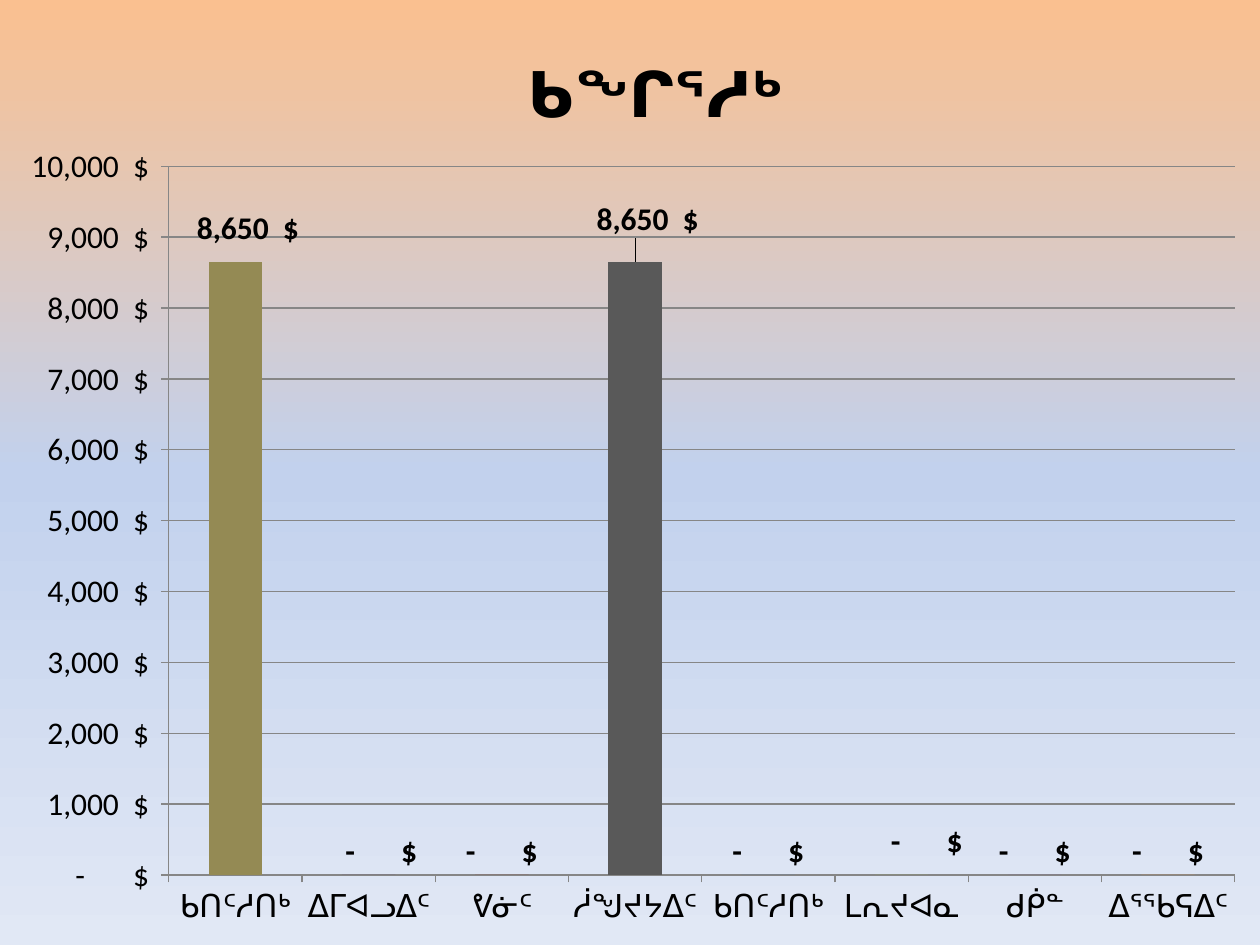
from copy import deepcopy
from lxml import etree
from pptx import Presentation
from pptx.chart.data import CategoryChartData
from pptx.dml.color import RGBColor
from pptx.enum.chart import XL_CHART_TYPE, XL_LABEL_POSITION, XL_TICK_MARK
from pptx.oxml.ns import qn
from pptx.util import Inches, Pt

COLUMN = XL_CHART_TYPE.COLUMN_CLUSTERED
OUTSIDE = XL_LABEL_POSITION.OUTSIDE_END
TICK_OUT = XL_TICK_MARK.OUTSIDE

WIDE, HIGH = Inches(10), Inches(7.5)
FONT = "Calibri"
MONEY = (r'_ * #,##0_)\ "$"_ ;_ * \(#,##0\)\ "$"_ ;'
         r'_ * "-"??_)\ "$"_ ;_ @_ ')
COLORS = {
    "text": "000000", "line": "868686", "bar": "4F81BD",
    "olive": "948A54", "plum": "604A7B", "brick": "953735",
    "grey": "595959", "green": "9BBB59", "violet": "8064A2",
    "orange": "F79646",
}
SKY = [(0, "FAC090"), (50, "C2D1ED"), (100, "E1E8F5")]

# Category, value, bar colour, label shift as shares of the chart
ROWS = [
    ("ᑲᑎᑦᓱᑎᒃ", 8650, "olive", (0.01, -0.01)),
    ("ᐃᒥᐊᓗᐃᑦ", 0, "plum", (0.01, 0)),
    ("ᕓᓃᑦ", 0, "brick", (0, 0)),
    ("ᓲᖑᔪᔭᐃᑦ", 8650, "grey", (0.01, -0.02)),
    ("ᑲᑎᑦᓱᑎᒃ", 0, "bar", None),
    ("ᒪᕆᔪᐊᓇ", 0, "green", (0.02, -0.01)),
    ("ᑯᑮᓐ", 0, "violet", None),
    ("ᐃᕐᖃᕋᐃᑦ", 0, "orange", None),
]


def rgb(name):
    return RGBColor.from_string(COLORS[name])


def style(font, size=18, bold=False, color="text"):
    font.name, font.size, font.bold = FONT, Pt(size), bold
    font.color.rgb = rgb(color)


def write(frame, text, **form):
    run = frame.paragraphs[0].add_run()
    run.text = text
    style(run.font, **form)


def node(parent, tag, **attrs):
    return etree.SubElement(parent, qn(tag), attrs)


def place(owner, index, inner=False, **shares):
    """Give a chart part a manual layout in shares of the chart."""
    for old in owner.findall(qn("c:layout")):
        owner.remove(old)
    layout = node(owner, "c:layout")
    manual = node(layout, "c:manualLayout")
    if inner:
        node(manual, "c:layoutTarget", val="inner")
    if index != 1 or owner.tag == qn("c:title"):
        for key in "xy":
            node(manual, f"c:{key}Mode", val="edge")
    for key, share in shares.items():
        node(manual, f"c:{key}", val=str(share))
    owner.insert(index, layout)


def paint_sky(slide):
    fill = slide.background.fill
    fill.gradient()
    fill.gradient_angle = 270
    stops = fill.gradient_stops
    first = slide.background._cSld.find(".//" + qn("a:gs"))
    first.addnext(deepcopy(first))
    for stop, (share, color) in zip(stops, SKY):
        stop.position = share / 100
        stop.color.rgb = RGBColor.from_string(color)


def style_axis(axis):
    axis.major_tick_mark = TICK_OUT
    axis.format.line.color.rgb = rgb("line")
    style(axis.tick_labels.font)


def style_bars(series):
    series.format.fill.solid()
    series.format.fill.fore_color.rgb = rgb("bar")
    labels = series.data_labels
    labels.show_value = True
    labels.number_format = MONEY
    labels.number_format_is_linked = False
    labels.position = OUTSIDE
    style(labels.font, bold=True)
    for i, (_, _, color, shift) in enumerate(ROWS):
        point = series.points[i]
        if color != "bar":
            point.format.fill.solid()
            point.format.fill.fore_color.rgb = rgb(color)
        if shift:
            label = point.data_label
            label.position = OUTSIDE
            style(label.font, bold=True)
            part = labels._element.findall(qn("c:dLbl"))[-1]
            form = node(part, "c:numFmt", formatCode=MONEY, sourceLinked="0")
            part.insert(1, form)
            place(part, 1, x=shift[0], y=shift[1])


def draw_chart(slide, left, top, width, height):
    data = CategoryChartData()
    data.categories = [row[0] for row in ROWS]
    data.add_series("Series 1", [row[1] for row in ROWS])
    chart = slide.shapes.add_chart(COLUMN, left, top, width, height, data).chart
    chart.has_legend = False
    style(chart.font)

    # Title
    chart.has_title = True
    title = chart.chart_title
    write(title.text_frame, "ᑲᖏᕐᓱᒃ", size=36, bold=True)
    place(title._element, 1, x=0.41, y=0.04)

    # Axes
    style_axis(chart.category_axis)
    axis = chart.value_axis
    style_axis(axis)
    axis.minimum_scale, axis.maximum_scale, axis.major_unit = 0, 10000, 1000
    axis.major_gridlines.format.line.color.rgb = rgb("line")
    axis.tick_labels.number_format = MONEY
    axis.tick_labels.number_format_is_linked = False

    # Bars
    plot = chart.plots[0]
    plot.gap_width = 150
    plot.vary_by_categories = False
    style_bars(plot.series[0])
    area = chart._chartSpace.find(".//" + qn("c:plotArea"))
    place(area, 0, inner=True, x=0.134, y=0.176, w=0.846, h=0.75)


def main():
    deck = Presentation()
    deck.slide_width, deck.slide_height = WIDE, HIGH
    slide = deck.slides.add_slide(deck.slide_layouts[6])
    paint_sky(slide)
    draw_chart(slide, 0, 0, WIDE, HIGH)
    deck.save("out.pptx")


if __name__ == "__main__":
    main()
